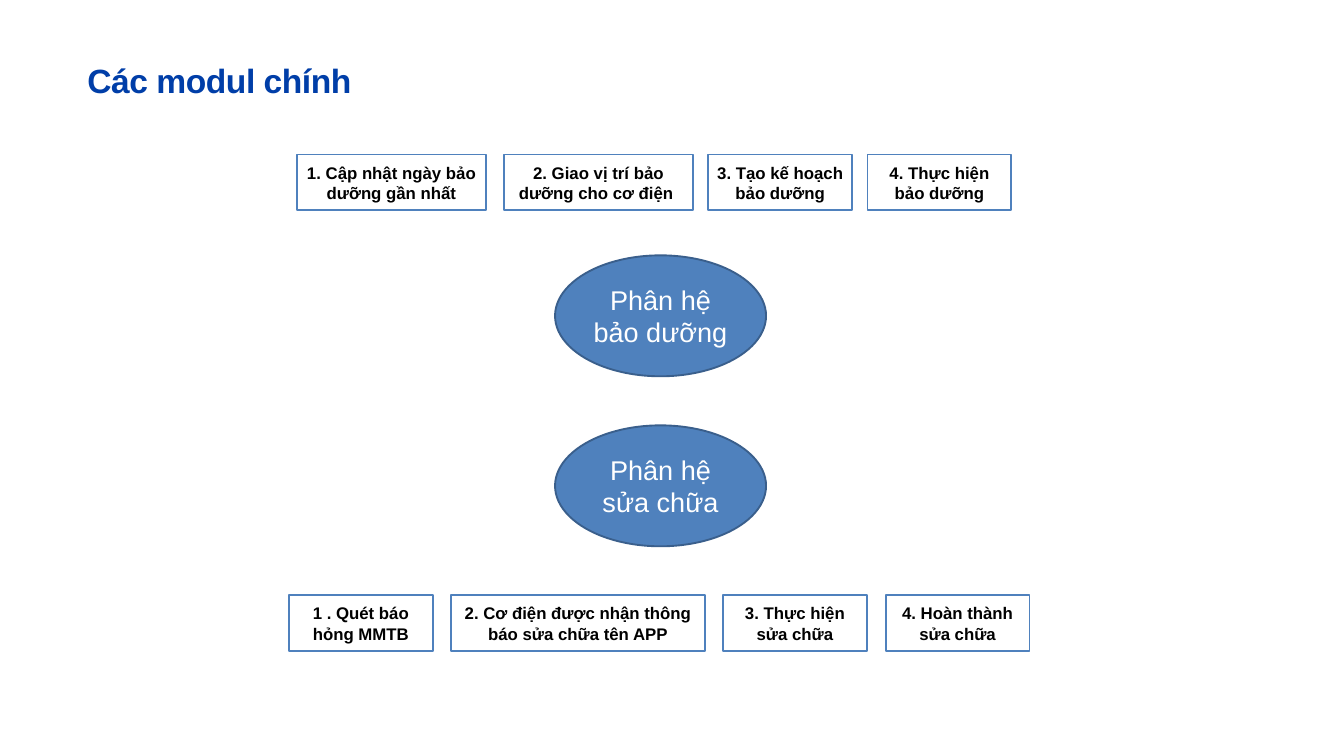
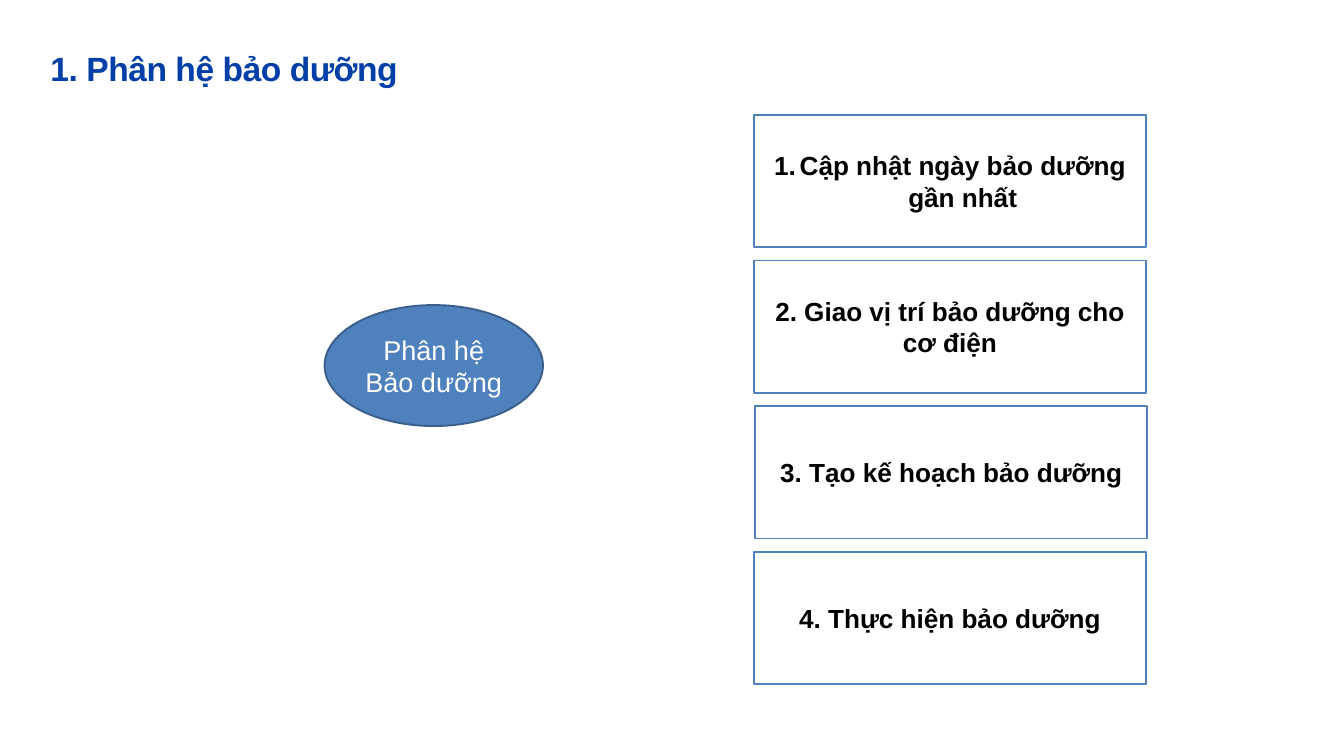
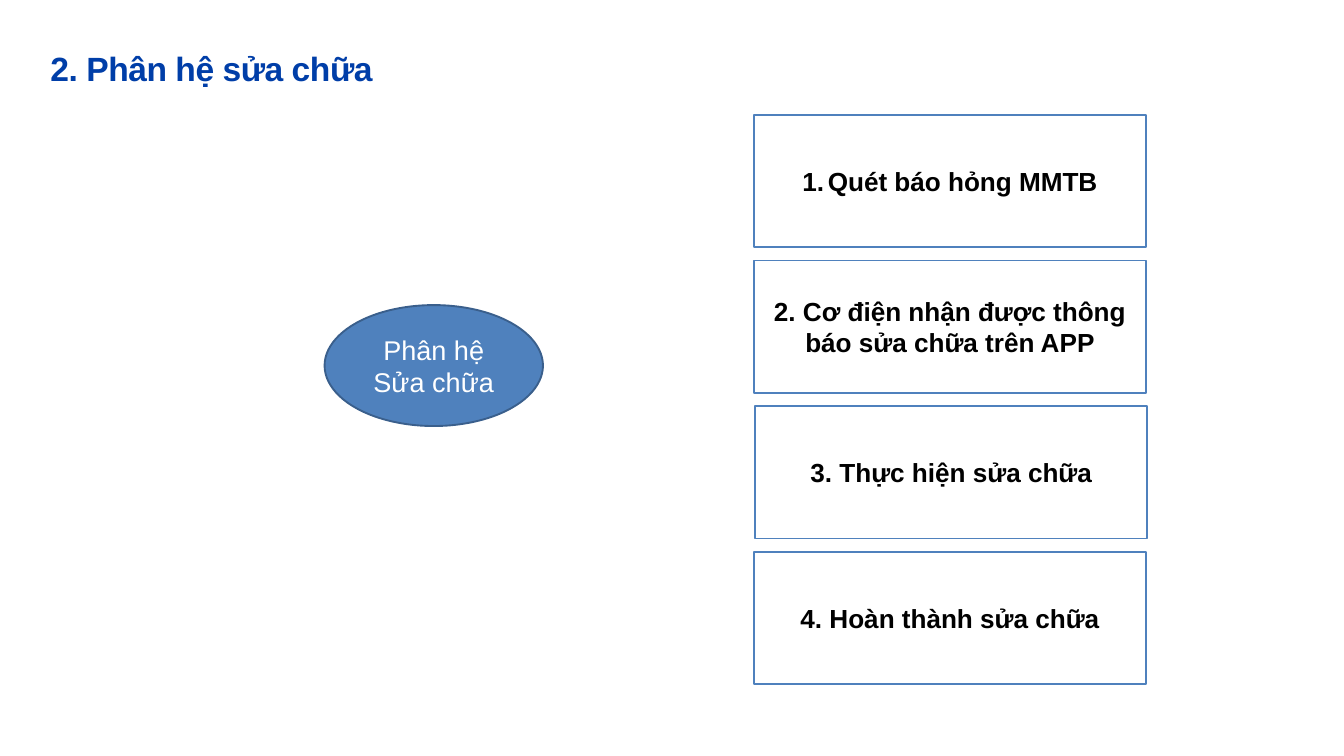
from pptx import Presentation
from pptx import util as u
from pptx.dml.color import RGBColor
from pptx.enum import shapes, text
from pptx.oxml.ns import qn
from lxml import etree

FONT = "Arial"
COLORS = {"title": "003EA8", "blue": "4F81BD", "edge": "3A5F8C",
          "white": "FFFFFF", "black": "000000"}

# Overview: ovals as (text, top); step rows as (top, [(text, left, width)])
OVERVIEW_TITLE = "Các modul chính"
MODULES = [("Phân hệ bảo dưỡng", 3.8), ("Phân hệ sửa chữa", 6.33)]
STEP_ROWS = [
    (2.3, [("1. Cập nhật ngày bảo dưỡng gần nhất", 4.42, 2.81),
           ("2. Giao vị trí bảo dưỡng cho cơ điện ", 7.5, 2.81),
           ("3. Tạo kế hoạch bảo dưỡng", 10.54, 2.14),
           ("4. Thực hiện bảo dưỡng", 12.91, 2.14)]),
    (8.86, [("1 . Quét báo hỏng MMTB", 4.3, 2.14),
            ("2. Cơ điện được nhận thông báo sửa chữa tên APP", 6.71, 3.78),
            ("3. Thực hiện sửa chữa", 10.76, 2.14),
            ("4. Hoàn thành sửa chữa", 13.18, 2.14)]),
]

# Detail slides: the first step is numbered automatically
DETAILS = [
    {"title": "1. Phân hệ bảo dưỡng", "module": "Phân hệ Bảo dưỡng",
     "steps": ["Cập nhật ngày bảo dưỡng gần nhất",
               "2. Giao vị trí bảo dưỡng cho cơ điện",
               "3. Tạo kế hoạch bảo dưỡng",
               "4. Thực hiện bảo dưỡng"]},
    {"title": "2. Phân hệ sửa chữa", "module": "Phân hệ Sửa chữa",
     "steps": ["Quét báo hỏng MMTB",
               "2. Cơ điện nhận được thông báo sửa chữa trên APP",
               "3. Thực hiện sửa chữa",
               "4. Hoàn thành sửa chữa"]},
]
STEP_LEFTS = [11.22, 11.22, 11.24, 11.22]
STEP_TOP, STEP_PITCH = 1.71, 6.5 / 3


def rgb(name):
    return RGBColor.from_string(COLORS[name])


def write(tf, content, size, color, bold=False, align=text.PP_ALIGN.CENTER,
          anchor=text.MSO_ANCHOR.MIDDLE, inset=(0.1, 0.05),
          line_pt=None, spacing=None, numbered=False):
    """Fill a text frame with one formatted paragraph."""
    tf.word_wrap = True
    tf.vertical_anchor = anchor
    tf.margin_left = tf.margin_right = u.Inches(inset[0])
    tf.margin_top = tf.margin_bottom = u.Inches(inset[1])
    p = tf.paragraphs[0]
    p.alignment = align
    if line_pt:
        p.line_spacing = u.Pt(line_pt)
    r = p.add_run()
    r.text = content
    r.font.name, r.font.size, r.font.bold = FONT, u.Pt(size), bold
    r.font.color.rgb = rgb(color)
    if spacing:
        r._r.get_or_add_rPr().set("spc", str(int(spacing * 100)))
    if numbered:
        pPr = p._p.get_or_add_pPr()
        indent = u.Inches(0.38)
        pPr.set("marL", str(indent))
        pPr.set("indent", str(-indent))
        etree.SubElement(pPr, qn("a:buAutoNum"), type="arabicPeriod")


def add_box(s, kind, at, fill, line, content, **fmt):
    sp = s.shapes.add_shape(kind, *(u.Inches(v) for v in at))
    sp.shadow.inherit = False
    sp.fill.solid()
    sp.fill.fore_color.rgb = rgb(fill)
    sp.line.color.rgb = rgb(line)
    sp.line.width = u.Pt(2)
    write(sp.text_frame, content, **fmt)


def add_module(s, at, content):
    add_box(s, shapes.MSO_SHAPE.OVAL, at, "blue", "edge", content,
            size=29, color="white")


def add_step(s, at, content, size, numbered=False):
    add_box(s, shapes.MSO_SHAPE.RECTANGLE, at, "white", "blue", content,
            size=size, color="black", bold=True, numbered=numbered)


def add_slide(prs, title, left, top):
    s = prs.slides.add_slide(prs.slide_layouts[5])
    sp = s.shapes.title
    sp.left, sp.top = u.Inches(left), u.Inches(top)
    sp.width, sp.height = u.Inches(7.37), u.Inches(0.58)
    write(sp.text_frame, title, size=36, color="title", bold=True,
          align=text.PP_ALIGN.LEFT, anchor=text.MSO_ANCHOR.TOP,
          inset=(0, 0), line_pt=43.5, spacing=-0.5)
    sp.text_frame.auto_size = text.MSO_AUTO_SIZE.SHAPE_TO_FIT_TEXT
    return s


def main():
    prs = Presentation()
    prs.slide_width, prs.slide_height = u.Inches(20), u.Inches(11.25)

    # Overview of both modules
    s = add_slide(prs, OVERVIEW_TITLE, 1.3, 0.88)
    for content, top in MODULES:
        add_module(s, (8.26, top, 3.14, 1.8), content)
    for top, steps in STEP_ROWS:
        for content, left, width in steps:
            add_step(s, (left, top, width, 0.83), content, 18)

    # One slide per module
    for detail in DETAILS:
        s = add_slide(prs, detail["title"], 0.75, 0.71)
        add_module(s, (4.83, 4.54, 3.25, 1.8), detail["module"])
        for i, (left, content) in enumerate(zip(STEP_LEFTS, detail["steps"])):
            at = (left, STEP_TOP + i * STEP_PITCH, 5.83, 1.97)
            add_step(s, at, content, 28, numbered=i == 0)

    prs.save("out.pptx")


if __name__ == "__main__":
    main()
